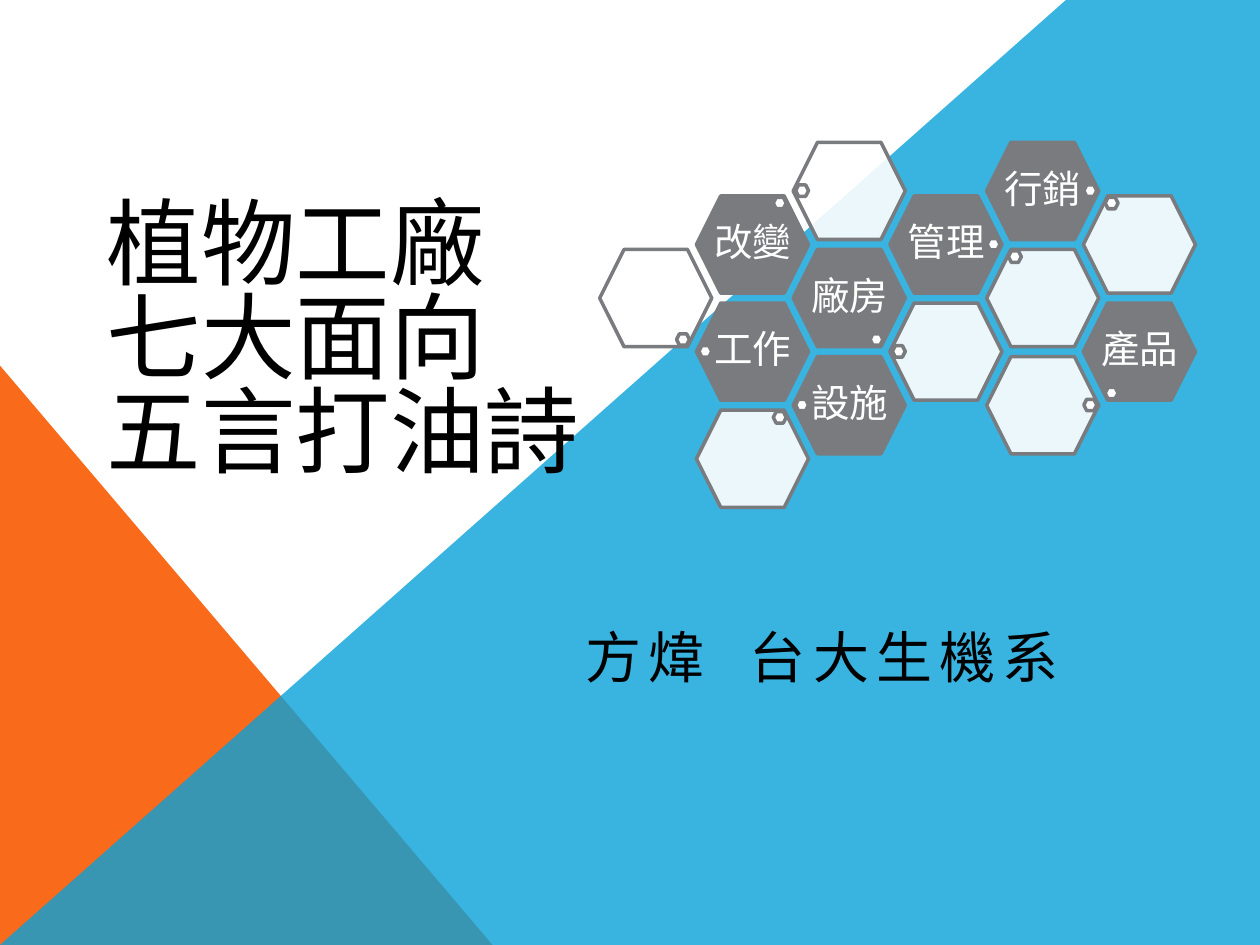
import pptx
import pptx.util
import pptx.dml.color
import pptx.enum.shapes
import pptx.enum.text
import pptx.oxml
import pptx.oxml.ns

Cm, Pt = pptx.util.Cm, pptx.util.Pt
SHAPE = pptx.enum.shapes.MSO_SHAPE
ALIGN = pptx.enum.text.PP_ALIGN
ANCHOR = pptx.enum.text.MSO_ANCHOR
qn = pptx.oxml.ns.qn

COLORS = {"blue": "08A1D9", "orange": "F96A1B", "gray": "797B7E",
          "white": "FFFFFF", "black": "000000"}
HEX_W, HEX_H = 2.26, 1.96
LEFT, TOP = 12.09, 2.87      # corner of the honeycomb
STEP_X, STEP_Y = 1.95, 1.08  # one column, half a row
DOTS = {"left": (0.05, 0.86), "right": (1.96, 0.86),
        "top left": (0.44, 0.03), "top right": (1.55, 0.03),
        "low left": (0.44, 1.7), "low right": (1.55, 1.7)}
# column, half row, dot place, label
CELLS = [
    (1, 3, "left", "工作"), (0, 2, "low right", ""),
    (2, 2, "low right", "廠房"), (3, 3, "left", ""),
    (1, 1, "top right", "改變"), (2, 0, "left", ""),
    (3, 1, "right", "管理"), (4, 2, "top left", ""),
    (4, 0, "right", "行銷"), (5, 1, "top left", ""),
    (5, 3, "low left", "產品"), (4, 4, "right", ""),
    (2, 4, "left", "設施"), (1, 5, "top right", ""),
]


class Deck:
    font = "Noto Sans CJK SC"
    label = "Roboto"

    def __init__(self):
        self.prs = pptx.Presentation()
        self.prs.slide_width, self.prs.slide_height = Cm(25.4), Cm(19.05)
        self.slide = self.prs.slides.add_slide(self.prs.slide_layouts[5])

    def color(self, name):
        return pptx.dml.color.RGBColor.from_string(COLORS[name])

    def paint(self, shape, fill, line=None, alpha=100):
        shape.shadow.inherit = False
        shape.fill.solid()
        shape.fill.fore_color.rgb = self.color(fill)
        if alpha < 100:
            tint = shape._element.spPr.find(qn("a:solidFill"))[0]
            pptx.oxml.ns  # namespace helpers for the alpha child
            tint.append(self.node("a:alpha", val=str(alpha * 1000)))
        if line:
            shape.line.color.rgb = self.color(line)
            shape.line.width = Pt(2)
        else:
            shape.line.fill.background()

    def node(self, tag, **attrs):
        """Make one DrawingML element."""
        item = pptx.oxml.parse_xml(
            f'<{tag} {pptx.oxml.ns.nsdecls("a")}/>')
        for key, value in attrs.items():
            item.set(key, value)
        return item

    def shape(self, kind, box, fill, line=None, alpha=100, home=None):
        item = (home or self.slide).shapes.add_shape(kind, *map(Cm, box))
        self.paint(item, fill, line, alpha)
        return item

    def outline(self, points, fill, alpha):
        spots = [(Cm(x), Cm(y)) for x, y in points]
        path = self.slide.shapes.build_freeform(*spots[0])
        path.add_line_segments(spots[1:], close=True)
        self.paint(path.convert_to_shape(), fill, alpha=alpha)

    def frame(self, shape, insets, anchor):
        frame = shape.text_frame
        frame.word_wrap = True
        frame.auto_size = pptx.enum.text.MSO_AUTO_SIZE.NONE
        frame.vertical_anchor = anchor
        (frame.margin_left, frame.margin_top,
         frame.margin_right, frame.margin_bottom) = map(Cm, insets)
        return frame.paragraphs[0]

    def run(self, para, text, size, color="black", font=None, gap=0):
        run = para.add_run()
        run.text = text
        run.font.name = font or self.font
        run.font.size = Pt(size)
        run.font.color.rgb = self.color(color)
        props = run.font._element
        props.append(self.node("a:ea", typeface=font or self.font))
        if gap:
            props.set("spc", str(gap * 100))

    def title(self, lines, box):
        item = self.slide.shapes.title
        item.left, item.top, item.width, item.height = map(Cm, box)
        self.slide.shapes._spTree.append(item._element)  # above the backdrop
        para = self.frame(item, (0.25, 0.13, 0.25, 0.03), ANCHOR.BOTTOM)
        para.alignment = ALIGN.LEFT
        para.line_spacing = 0.83
        for i, line in enumerate(lines):
            if i:
                para.add_line_break()
            self.run(para, line, 54)

    def byline(self, text, box):
        item = self.slide.shapes.add_textbox(*map(Cm, box))
        para = self.frame(item, (0.25, 0.03, 0.25, 0.13), ANCHOR.TOP)
        para.alignment = ALIGN.RIGHT
        para.space_before = Pt(8)
        self.run(para, text, 32, gap=4)

    def cell(self, home, col, row, dot, text):
        """Draw one honeycomb cell: filled if it has a label."""
        x, y = LEFT + col * STEP_X, TOP + row * STEP_Y
        self.shape(SHAPE.HEXAGON, (x, y, HEX_W, HEX_H),
                   "gray" if text else "white", "gray",
                   100 if text else 90, home)
        if text:
            box = home.shapes.add_textbox(
                *map(Cm, (x + 0.35, y + 0.3, 1.57, 1.35)))
            para = self.frame(box, (0, 0.08, 0, 0.08), ANCHOR.MIDDLE)
            para.alignment = ALIGN.CENTER
            para.line_spacing = 0.9
            self.run(para, text, 22, "white", self.label)
        dx, dy = DOTS[dot]
        self.shape(SHAPE.HEXAGON, (x + dx, y + dy, 0.26, 0.23),
                   "white", "gray", home=home)


def main():
    deck = Deck()
    deck.shape(SHAPE.RIGHT_TRIANGLE, (0, 7.37, 9.93, 11.68), "orange")
    deck.outline([(0, 19.05), (21.49, 0), (25.4, 0), (25.4, 19.05)],
                 "blue", 80)
    deck.title(["植物工廠", "七大面向", "五言打油詩"],
               (1.9, 3.33, 21.6, 6.48))
    deck.byline("方煒  台大生機系", (3.81, 12.52, 17.78, 3.15))
    comb = deck.slide.shapes.add_group_shape()
    for cell in CELLS:
        deck.cell(comb, *cell)
    deck.prs.save("out.pptx")


if __name__ == "__main__":
    main()
